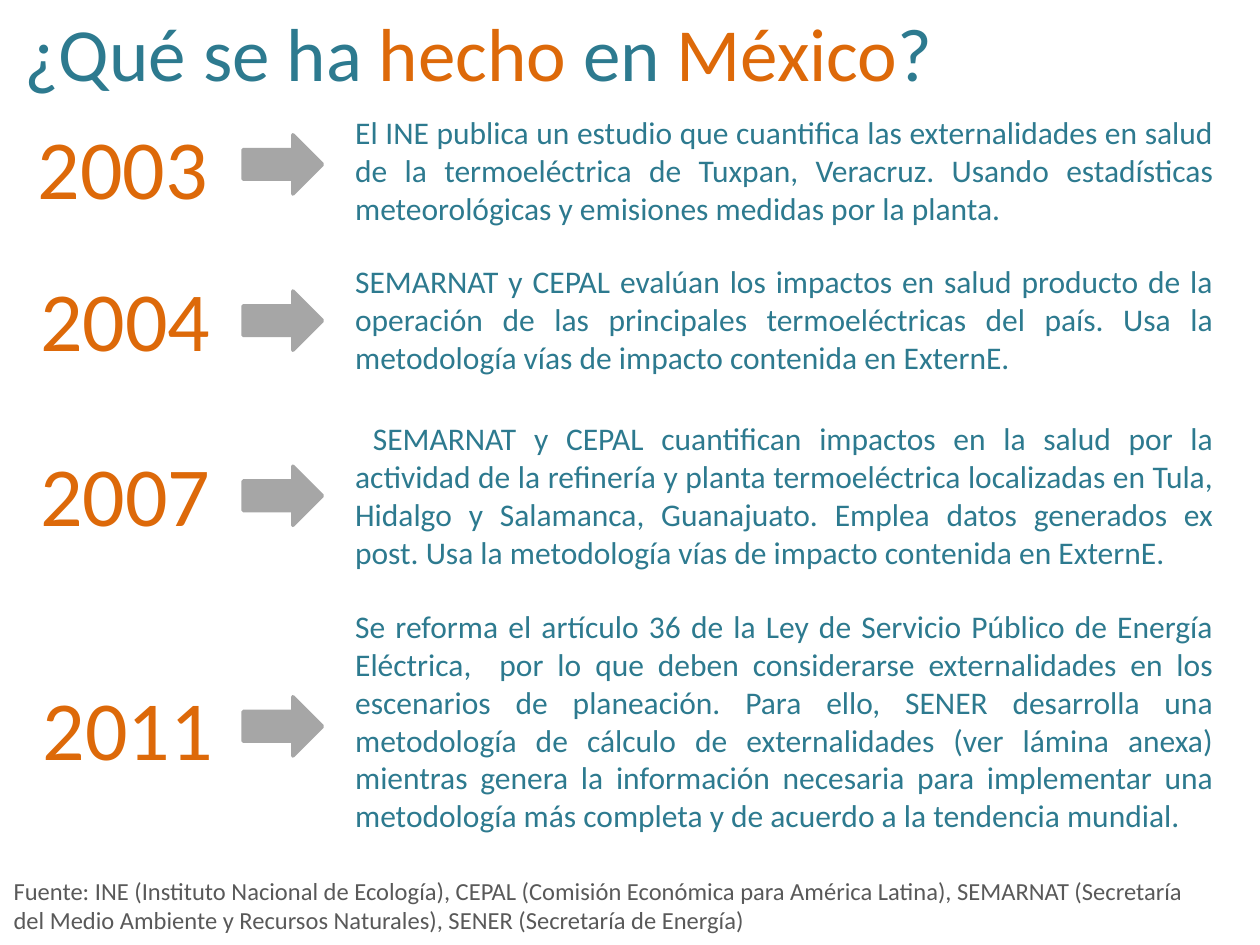
from pptx import Presentation
from pptx.dml.color import RGBColor
from pptx.enum.shapes import MSO_SHAPE
from pptx.enum.text import MSO_ANCHOR, MSO_AUTO_SIZE, PP_ALIGN
from pptx.util import Inches, Pt

TEAL = RGBColor(0x2D, 0x7A, 0x8F)
ORANGE = RGBColor(0xDD, 0x69, 0x09)
ARROW_GRAY = RGBColor(0xA6, 0xA6, 0xA6)
SOURCE_GRAY = RGBColor(0x59, 0x59, 0x59)
RIGHT_ARROW = MSO_SHAPE.RIGHT_ARROW
TOP = MSO_ANCHOR.TOP
FIT_SHAPE = MSO_AUTO_SIZE.SHAPE_TO_FIT_TEXT
NO_FIT = MSO_AUTO_SIZE.NONE
LEFT = PP_ALIGN.LEFT
JUSTIFY = PP_ALIGN.JUSTIFY

deck = Presentation()
deck.slide_width = Inches(10)
deck.slide_height = Inches(7.5)
page = deck.slides.add_slide(deck.slide_layouts[6])


def add_text(left, top, width, height, spans, size, align=LEFT, fit=FIT_SHAPE):
    box = page.shapes.add_textbox(Inches(left), Inches(top), Inches(width), Inches(height))
    frame = box.text_frame
    frame.word_wrap = True
    frame.auto_size = fit
    frame.vertical_anchor = TOP
    para = frame.paragraphs[0]
    para.alignment = align
    for text, color in spans:
        span = para.add_run()
        span.text = text
        span.font.name = "Calibri"
        span.font.size = Pt(size)
        span.font.color.rgb = color


title = [
    (" ¿Qué se ha ", TEAL),
    ("hecho", ORANGE),
    (" en ", TEAL),
    ("México", ORANGE),
    ("?", TEAL),
]
add_text(-0.04, 0, 8.5, 1.09, title, 42.9, fit=NO_FIT)

milestones = [
    ("2003", 0.2, 0.87, 1.07, 0.85, 1.01,
     "El INE publica un estudio que cuantifica las externalidades en salud de la "
     "termoeléctrica de Tuxpan, Veracruz. Usando estadísticas meteorológicas y "
     "emisiones medidas por la planta. "),
    ("2004", 0.22, 2.07, 2.31, 2.03, 1.01,
     "SEMARNAT y CEPAL evalúan los impactos en salud producto de la operación de "
     "las principales termoeléctricas del país. Usa la metodología vías de impacto "
     "contenida en ExternE."),
    ("2007", 0.22, 3.46, 3.7, 3.28, 1.31,
     " SEMARNAT y CEPAL cuantifican impactos en la salud por la actividad de la "
     "refinería y planta termoeléctrica localizadas en Tula, Hidalgo y Salamanca, "
     "Guanajuato. Emplea datos generados ex post. Usa la metodología vías de "
     "impacto contenida en ExternE. "),
    ("2011", 0.24, 5.32, 5.53, 4.77, 2.22,
     "Se reforma el artículo 36 de la Ley de Servicio Público de Energía Eléctrica,  "
     "por lo que deben considerarse externalidades en los escenarios de planeación. "
     "Para ello, SENER desarrolla una metodología de cálculo de externalidades (ver "
     "lámina anexa) mientras genera la información necesaria para implementar una "
     "metodología más completa y de acuerdo a la tendencia mundial."),
]

for year, year_left, year_top, arrow_top, text_top, text_height, description in milestones:
    add_text(year_left, year_top, 1.89, 0.91, [(year, ORANGE)], 48)

    arrow = page.shapes.add_shape(
        RIGHT_ARROW, Inches(1.93), Inches(arrow_top), Inches(0.63), Inches(0.47))
    arrow.shadow.inherit = False
    arrow.fill.solid()
    arrow.fill.fore_color.rgb = ARROW_GRAY
    arrow.line.color.rgb = ARROW_GRAY
    arrow.line.width = Pt(2)

    add_text(2.72, text_top, 7.01, text_height, [(description, TEAL)], 18, JUSTIFY)

source = (
    "Fuente: INE (Instituto Nacional de Ecología), CEPAL (Comisión Económica para "
    "América Latina), SEMARNAT (Secretaría del Medio Ambiente y Recursos Naturales), "
    "SENER (Secretaría de Energía)"
)
add_text(0.01, 6.9, 9.56, 0.57, [(source, SOURCE_GRAY)], 14)

deck.save("out.pptx")
